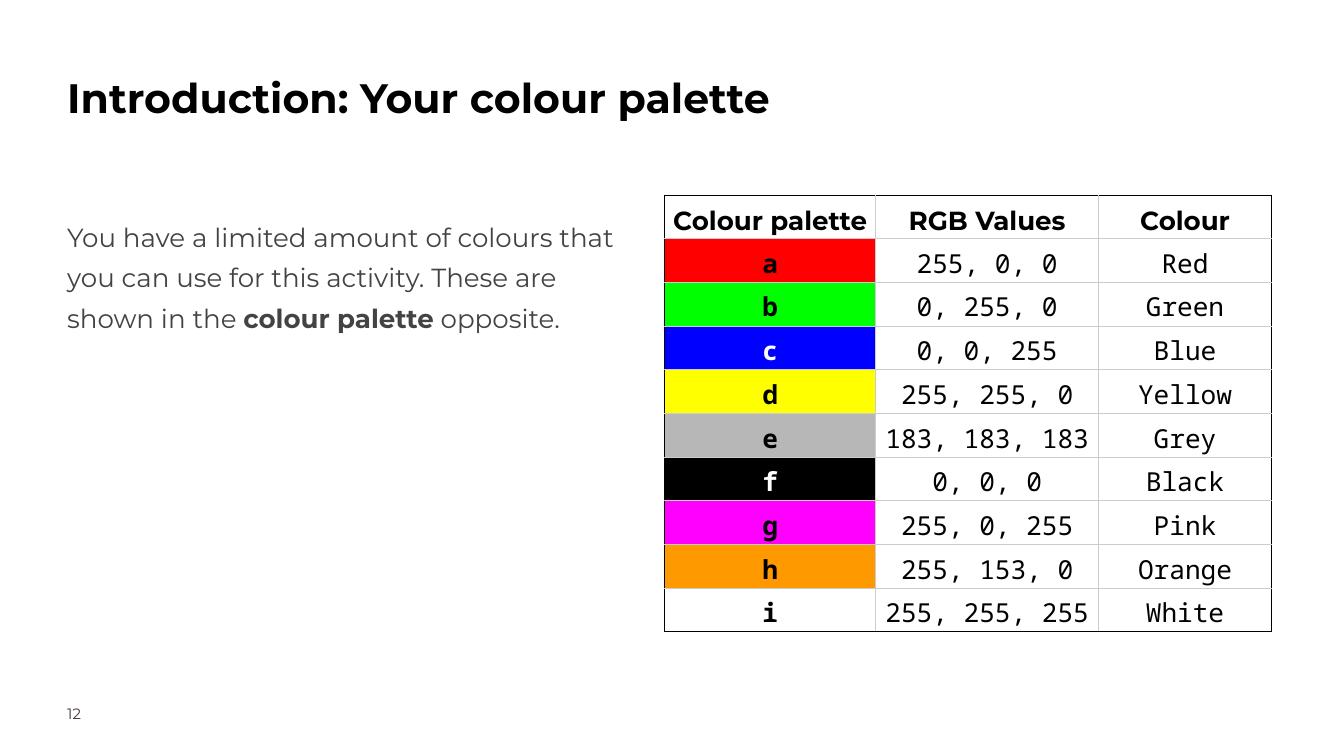
import pptx
import pptx.dml.color
import pptx.enum.text
import pptx.oxml
import pptx.oxml.ns
import pptx.util
from pptx.util import Inches

BLACK, WHITE, GRID = "000000", "FFFFFF", "CCCCCC"
BODY_FONT, CODE_FONT = "Montserrat", "Noto Sans Mono"
TABLE_SIZE = 28
ROW_HEIGHT = 0.65
COLUMN_WIDTHS = [3.14, 3.32, 2.57]
HEADINGS = ["Colour palette", "RGB Values", "Colour"]
PALETTE = [
    ("a", (255, 0, 0), "Red"),
    ("b", (0, 255, 0), "Green"),
    ("c", (0, 0, 255), "Blue"),
    ("d", (255, 255, 0), "Yellow"),
    ("e", (183, 183, 183), "Grey"),
    ("f", (0, 0, 0), "Black"),
    ("g", (255, 0, 255), "Pink"),
    ("h", (255, 153, 0), "Orange"),
    ("i", (255, 255, 255), "White"),
]


def color(value):
    return pptx.dml.color.RGBColor.from_string(value)


def readable_on(rgb):
    """Return white for very dark fills and black for all others."""
    red, green, blue = rgb
    return WHITE if 0.3 * red + 0.59 * green + 0.11 * blue < 50 else BLACK


class SlideBuilder:
    def __init__(self, slide):
        self.slide = slide

    def style(self, paragraph, size, ink, font=BODY_FONT, bold=False, spacing=None):
        paragraph.font.name = font
        paragraph.font.size = pptx.util.Pt(size)
        paragraph.font.color.rgb = color(ink)
        paragraph.font.bold = bold
        if spacing:
            paragraph.line_spacing = spacing

    def text(self, box, parts, size, ink, bold=False, spacing=None):
        """Add a text box from (text, emphasised) parts."""
        shape = self.slide.shapes.add_textbox(*map(Inches, box))
        frame = shape.text_frame
        frame.word_wrap = True
        frame.margin_left = frame.margin_right = 0
        frame.margin_top = frame.margin_bottom = 0
        paragraph = frame.paragraphs[0]
        for words, emphasised in parts:
            run = paragraph.add_run()
            run.text = words
            if emphasised:
                run.font.bold = True
        self.style(paragraph, size, ink, bold=bold, spacing=spacing)

    def cell(self, cell, words, ink=BLACK, font=CODE_FONT, bold=False, fill=None):
        cell.text = words
        cell.vertical_anchor = pptx.enum.text.MSO_ANCHOR.BOTTOM
        cell.margin_left = cell.margin_right = Inches(0.03)
        cell.margin_top = cell.margin_bottom = Inches(0.02)
        paragraph = cell.text_frame.paragraphs[0]
        paragraph.alignment = pptx.enum.text.PP_ALIGN.CENTER
        self.style(paragraph, TABLE_SIZE, ink, font, bold, spacing=1.15)
        if fill:
            cell.fill.solid()
            cell.fill.fore_color.rgb = color(fill)
        else:
            cell.fill.background()

    def borders(self, table):
        """Draw a black outline around a grey grid."""
        last_row, last_column = len(table.rows) - 1, len(table.columns) - 1
        for row in range(last_row + 1):
            for column in range(last_column + 1):
                properties = table.cell(row, column)._tc.get_or_add_tcPr()
                outer_edges = {
                    "lnL": column == 0,
                    "lnR": column == last_column,
                    "lnT": row == 0,
                    "lnB": row == last_row,
                }
                for index, (edge, outer) in enumerate(outer_edges.items()):
                    properties.insert(index, pptx.oxml.parse_xml(
                        f'<a:{edge} {pptx.oxml.ns.nsdecls("a")} w="{pptx.util.Pt(0.75)}">'
                        f'<a:solidFill><a:srgbClr val="{BLACK if outer else GRID}"/>'
                        f'</a:solidFill></a:{edge}>'))

    def palette_table(self, left, top):
        row_count = len(PALETTE) + 1
        table = self.slide.shapes.add_table(
            row_count, len(COLUMN_WIDTHS), Inches(left), Inches(top),
            Inches(sum(COLUMN_WIDTHS)), Inches(ROW_HEIGHT * row_count)).table
        table.horz_banding = False
        for column, width in zip(table.columns, COLUMN_WIDTHS):
            column.width = Inches(width)
        for row in table.rows:
            row.height = Inches(ROW_HEIGHT)
        for column, heading in enumerate(HEADINGS):
            self.cell(table.cell(0, column), heading, font=BODY_FONT, bold=True)
        for row, (letter, rgb, name) in enumerate(PALETTE, start=1):
            self.cell(table.cell(row, 0), letter, readable_on(rgb), bold=True,
                      fill="%02X%02X%02X" % rgb)
            self.cell(table.cell(row, 1), ", ".join(map(str, rgb)))
            self.cell(table.cell(row, 2), name)
        self.borders(table)


def main():
    presentation = pptx.Presentation()
    presentation.slide_width = Inches(20)
    presentation.slide_height = Inches(11.25)
    builder = SlideBuilder(presentation.slides.add_slide(presentation.slide_layouts[6]))

    builder.text((1, 0.97, 11.24, 1.78), [("Introduction: Your colour palette", False)],
                 44, BLACK, bold=True, spacing=1.15)
    builder.text((1, 3.15, 8.64, 6.52), [
        ("You have a limited amount of colours that you can use for this activity. "
         "These are shown in the ", False),
        ("colour palette", True),
        (" opposite.", False),
    ], 28, "434343", spacing=1.3)
    builder.text((1, 10.48, 1.57, 0.39), [("12", False)], 16, "4B3241")
    builder.palette_table(9.89, 2.9)

    presentation.save("out.pptx")


if __name__ == "__main__":
    main()
